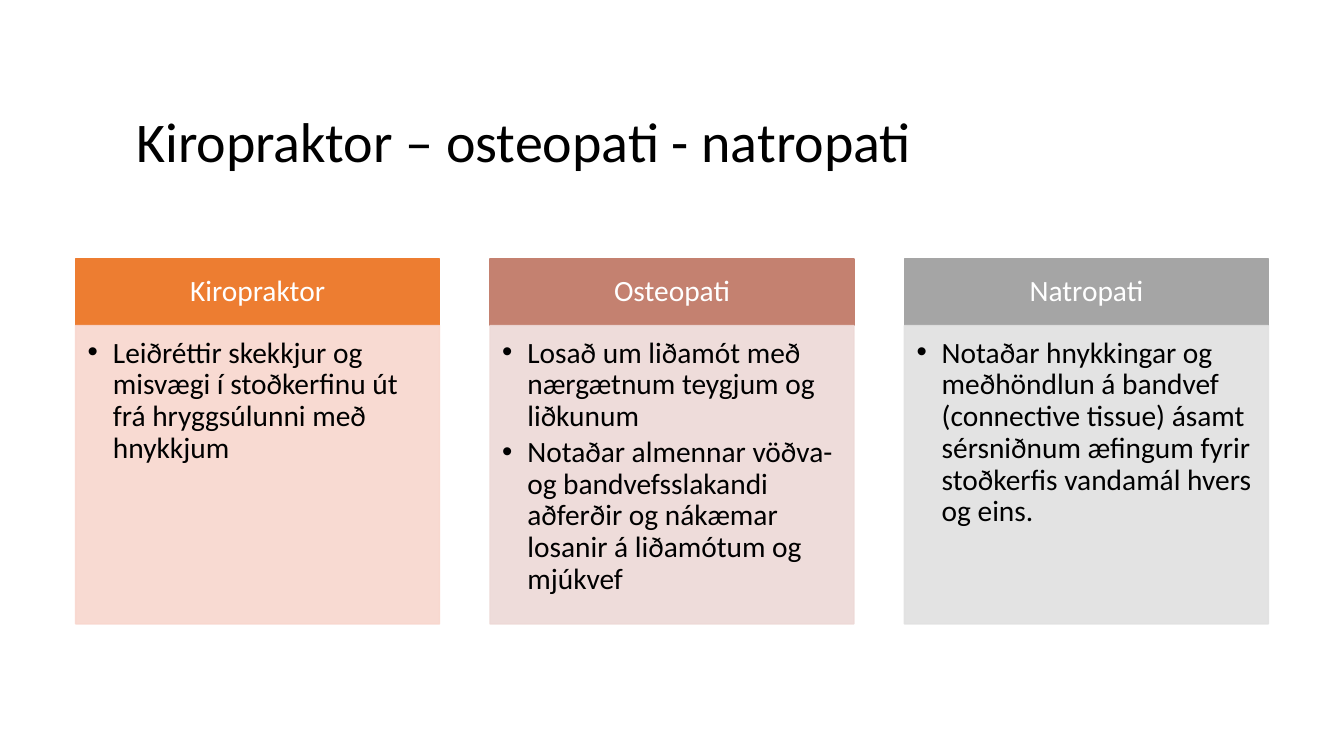
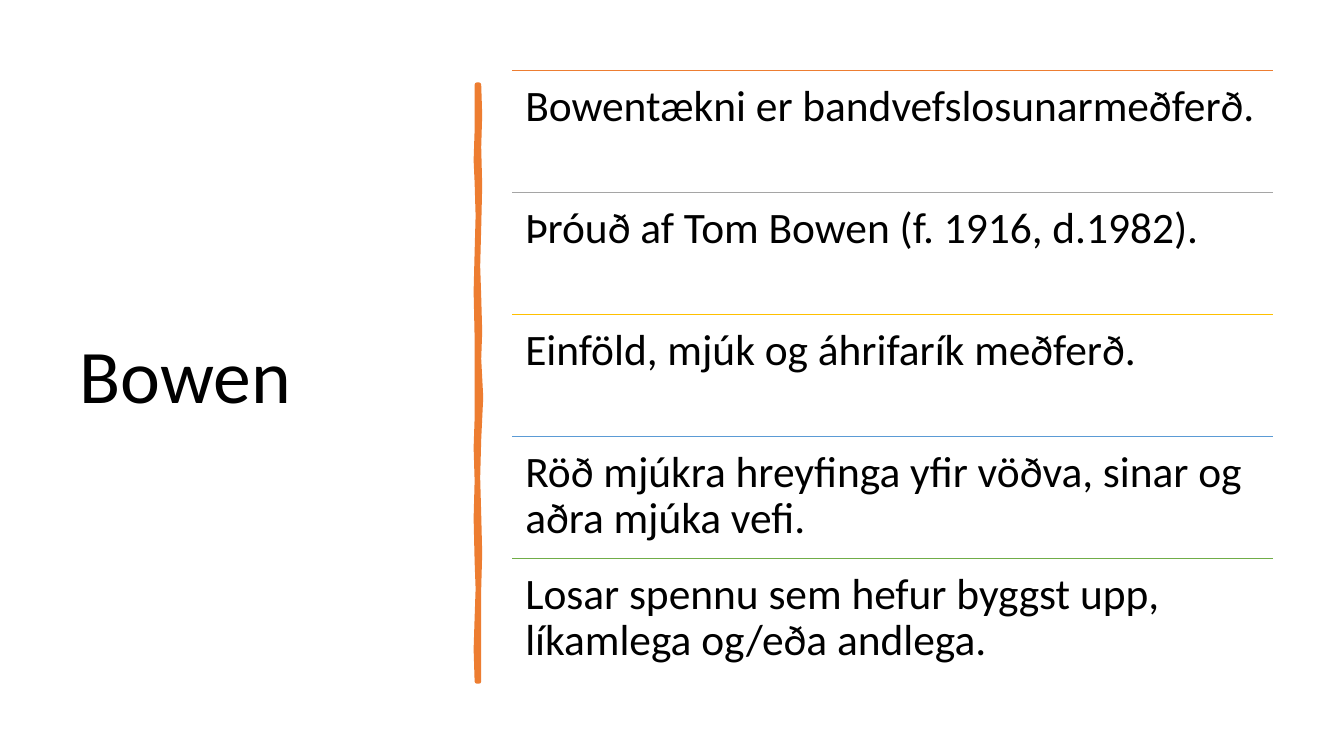
from dataclasses import dataclass

from lxml import etree
from pptx import Presentation
from pptx.dml.color import RGBColor
from pptx.enum.shapes import MSO_CONNECTOR, MSO_SHAPE
from pptx.enum.text import MSO_ANCHOR, MSO_AUTO_SIZE, PP_ALIGN
from pptx.oxml.ns import qn
from pptx.util import Inches, Pt

LEFT, CENTER = PP_ALIGN.LEFT, PP_ALIGN.CENTER
TOP, MIDDLE = MSO_ANCHOR.TOP, MSO_ANCHOR.MIDDLE
RECT, STRAIGHT = MSO_SHAPE.RECTANGLE, MSO_CONNECTOR.STRAIGHT
TITLE_ONLY = 5


@dataclass(frozen=True)
class Theme:
    font: str = "Calibri"
    black: str = "000000"
    white: str = "FFFFFF"
    orange: str = "ED7D31"
    rose: str = "C48170"
    gray: str = "A5A5A5"
    gold: str = "FFC000"
    blue: str = "5B9BD5"
    green: str = "70AD47"
    pale_orange: str = "F8D7CE"
    pale_rose: str = "EDD9D7"
    pale_gray: str = "E1E1E1"
    title_size: int = 40
    side_title_size: int = 54
    column_size: int = 21
    row_size: int = 31
    line_spacing: float = 0.9


T = Theme()

COLUMNS = [
    ("Kiropraktor", T.orange, T.pale_orange,
     ["Leiðréttir skekkjur og misvægi í stoðkerfinu út frá hryggsúlunni með hnykkjum"]),
    ("Osteopati", T.rose, T.pale_rose,
     ["Losað um liðamót með nærgætnum teygjum og liðkunum",
      "Notaðar almennar vöðva- og bandvefsslakandi aðferðir og nákæmar losanir á "
      "liðamótum og mjúkvef"]),
    ("Natropati", T.gray, T.pale_gray,
     ["Notaðar hnykkingar og meðhöndlun á bandvef (connective tissue) ásamt "
      "sérsniðnum æfingum fyrir stoðkerfis vandamál hvers og eins."]),
]

ROWS = [
    (T.orange, "Bowentækni er bandvefslosunarmeðferð."),
    (T.gray, "Þróuð af Tom Bowen (f. 1916, d.1982)."),
    (T.gold, "Einföld, mjúk og áhrifarík meðferð."),
    (T.blue, "Röð mjúkra hreyfinga yfir vöðva, sinar og aðra mjúka vefi."),
    (T.green, "Losar spennu sem hefur byggst upp, líkamlega og/eða andlega."),
]

# Hand-drawn bar edges: (x, y) in hundredths of an inch from its top left
RIGHT_EDGE = [(3, 0), (4.5, 30), (3, 62), (3.5, 100), (3, 142), (2.5, 180), (3, 210),
              (4, 245), (3, 272), (5, 310), (3, 352), (1.5, 390), (3, 426), (4.5, 465),
              (3, 500), (3, 545), (3, 592)]
LEFT_EDGE = [(1, 592), (0.5, 560), (1, 529), (1.5, 500), (1, 473), (0, 430), (1, 393),
             (0, 360), (1, 331), (1, 290), (1, 251), (0, 205), (1, 166), (2, 130),
             (1, 97), (0, 75), (1, 45), (1, 0)]


def rgb(color):
    return RGBColor.from_string(color)


def set_alpha(color_format_fill, percent):
    color = color_format_fill._xPr.find(qn("a:solidFill"))[0]
    etree.SubElement(color, qn("a:alpha"), val=str(percent * 1000))


def paint(shape, color, width=1, alpha=None):
    shape.shadow.inherit = False
    shape.line.width = Pt(width)
    for fill in (shape.fill, shape.line.fill):
        fill.solid()
        fill.fore_color.rgb = rgb(color)
        if alpha:
            set_alpha(fill, alpha)


def write(tf, lines, size, color=T.black, align=LEFT, anchor=TOP, insets=None,
          after=0, bullet=False):
    frame = {"word_wrap": True, "auto_size": MSO_AUTO_SIZE.NONE, "vertical_anchor": anchor}
    if insets:
        sides = ("margin_left", "margin_top", "margin_right", "margin_bottom")
        frame.update(zip(sides, map(Inches, insets)))
    for name, value in frame.items():
        setattr(tf, name, value)
    for i, line in enumerate(lines):
        p = tf.add_paragraph() if i else tf.paragraphs[0]
        if bullet:
            pPr = p._p.get_or_add_pPr()
            pPr.set("marL", str(Inches(0.25)))
            pPr.set("indent", str(-Inches(0.25)))
            etree.SubElement(pPr, qn("a:buFont"), typeface="Arial")
            etree.SubElement(pPr, qn("a:buChar"), char="•")
        for name, value in {"alignment": align, "line_spacing": T.line_spacing,
                            "space_before": Pt(0), "space_after": Pt(after)}.items():
            setattr(p, name, value)
        r = p.add_run()
        r.text = line
        for name, value in {"name": T.font, "size": Pt(size)}.items():
            setattr(r.font, name, value)
        r.font.color.rgb = rgb(color)


def add_titled_slide(prs, title, box, size, anchor=TOP):
    s = prs.slides.add_slide(prs.slide_layouts[TITLE_ONLY])
    sp = s.shapes.title
    sp.left, sp.top, sp.width, sp.height = map(Inches, box)
    write(sp.text_frame, [title], size, anchor=anchor)
    return s


def add_column(s, box, heading, color, pale, points):
    x, y, w, h = box
    head_h = 0.66
    # Heading band
    head = s.shapes.add_shape(RECT, *map(Inches, (x, y, w, head_h)))
    paint(head, color)
    write(head.text_frame, [heading], T.column_size, T.white, CENTER, MIDDLE,
          (0.16, 0.09, 0.16, 0.09))
    # Bulleted body
    body = s.shapes.add_shape(RECT, *map(Inches, (x, y + head_h, w, h - head_h)))
    paint(body, pale, alpha=90)
    write(body.text_frame, points, T.column_size, insets=(0.12, 0.12, 0.16, 0.18),
          after=3, bullet=True)


def add_hand_drawn_bar(s, x, y):
    start, *rest = RIGHT_EDGE + LEFT_EDGE
    builder = s.shapes.build_freeform(*start, scale=Inches(0.01))
    builder.add_line_segments(rest, close=True)
    paint(builder.convert_to_shape(Inches(x), Inches(y)), T.orange, 3.25)


def add_ruled_rows(s, box, rows):
    x, y, w, h = box
    row_h = h / len(rows)
    for i, (color, text) in enumerate(rows):
        top = y + i * row_h
        rule = s.shapes.add_connector(STRAIGHT, *map(Inches, (x, top, x + w, top)))
        rule.line.color.rgb = rgb(color)
        rule.line.width = Pt(1)
        etree.SubElement(rule._element.spPr, qn("a:effectLst"))
        tb = s.shapes.add_textbox(*map(Inches, (x, top, w, row_h)))
        write(tb.text_frame, [text], T.row_size, insets=(0.13,) * 4)


def build_columns_slide(prs):
    s = add_titled_slide(prs, "Kiropraktor – osteopati - natropati",
                         (1.25, 1.08, 10.83, 0.75), T.title_size)
    col_w, gap = 3.61, 0.5
    for i, column in enumerate(COLUMNS):
        add_column(s, (0.75 + i * (col_w + gap), 2.57, col_w, 3.62), *column)


def build_rows_slide(prs):
    s = add_titled_slide(prs, "Bowen", (0.69, 0.7, 3.74, 6.11), T.side_title_size, MIDDLE)
    add_hand_drawn_bar(s, 4.72, 0.84)
    add_ruled_rows(s, (5.08, 0.7, 7.55, 6.05), ROWS)


def main():
    prs = Presentation()
    prs.slide_width, prs.slide_height = Inches(13.33), Inches(7.5)
    build_columns_slide(prs)
    build_rows_slide(prs)
    prs.save("out.pptx")


if __name__ == "__main__":
    main()
